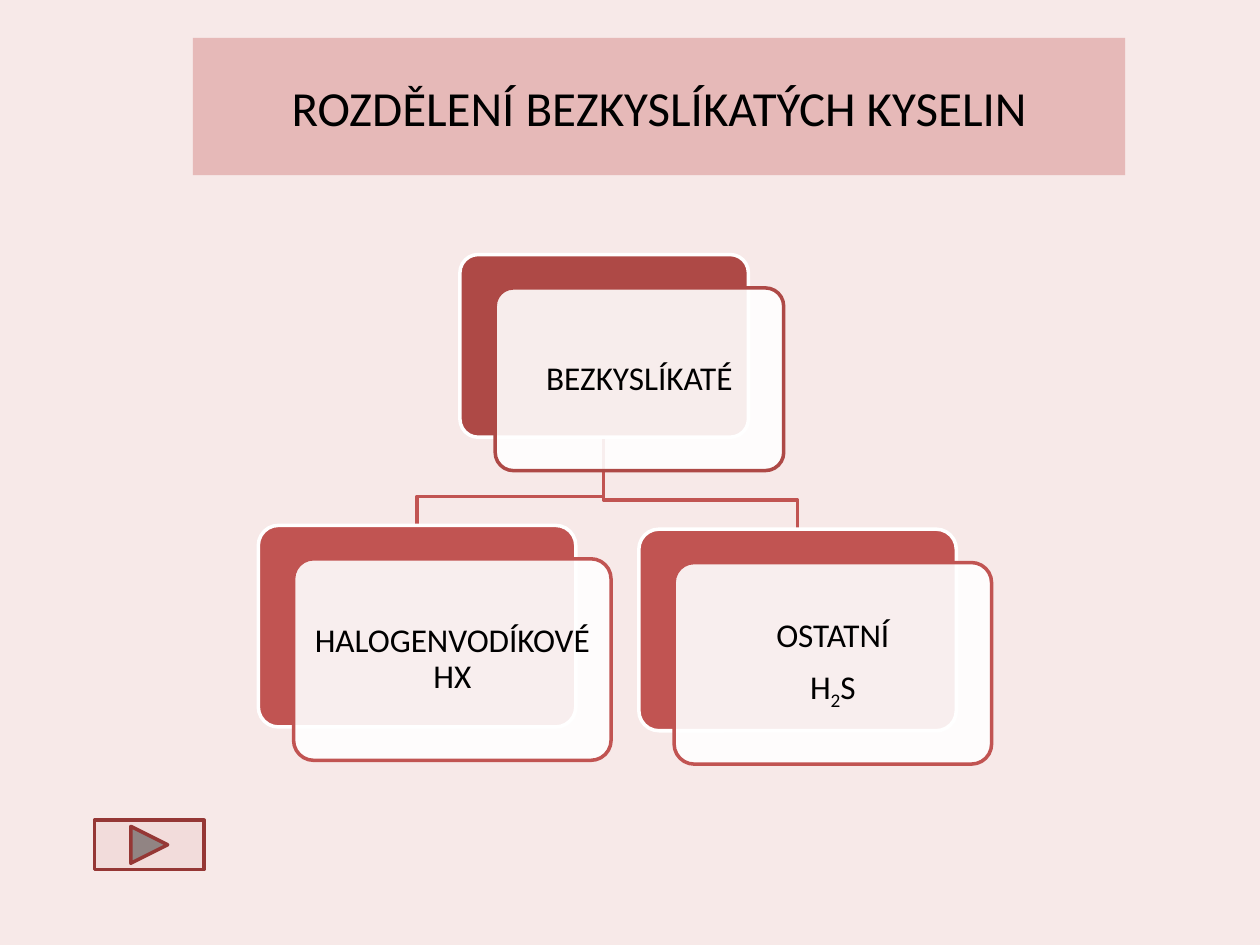
"""Build a slide with a tree that sorts the oxygen-free acids."""
from lxml import etree
from pptx import Presentation
from pptx.dml.color import RGBColor
from pptx.enum.shapes import MSO_SHAPE
from pptx.enum.text import MSO_ANCHOR, PP_ALIGN
from pptx.oxml.ns import qn
from pptx.util import Inches, Pt

CENTER = PP_ALIGN.CENTER
MIDDLE = MSO_ANCHOR.MIDDLE
ROUNDED = MSO_SHAPE.ROUNDED_RECTANGLE
FORWARD = MSO_SHAPE.ACTION_BUTTON_FORWARD_OR_NEXT
TITLE_ONLY = 5

COLORS = {
    "background": "F7E9E8",
    "title": "E6B9B8",
    "text": "000000",
    "white": "FFFFFF",
    "root": "AE4946",
    "child": "C15452",
    "button": "F2DCDB",
    "button_line": "953735",
}


class AcidSlide:
    """Hold the style and the slide, and draw each kind of element."""

    font = "Calibri"
    title_size = Pt(28)
    node_size = Pt(19)
    line_width = Pt(2)
    card_shift = (0.28, 0.265)
    inset = Inches(0.08)

    def __init__(self, presentation):
        """Add the slide and colour its background."""
        self.slide = presentation.slides.add_slide(
            presentation.slide_layouts[TITLE_ONLY])
        self.paint(self.slide.background.fill, "background")

    def paint(self, fill, color):
        """Give a fill one solid colour."""
        fill.solid()
        fill.fore_color.rgb = RGBColor.from_string(COLORS[color])

    def outline(self, shape, color):
        """Give a shape the common line in one colour."""
        self.paint(shape.line.fill, color)
        shape.line.width = self.line_width

    def style_text(self, paragraph, size):
        """Centre a paragraph and format its runs."""
        paragraph.alignment = CENTER
        for run in paragraph.runs:
            run.font.name = self.font
            run.font.size = size
            run.font.color.rgb = RGBColor.from_string(COLORS["text"])

    def title(self, text, left, top, width, height):
        """Fill and place the title placeholder."""
        heading = self.slide.shapes.title
        heading.left, heading.top = Inches(left), Inches(top)
        heading.width, heading.height = Inches(width), Inches(height)
        self.paint(heading.fill, "title")
        heading.text_frame.text = text
        heading.text_frame.vertical_anchor = MIDDLE
        self.style_text(heading.text_frame.paragraphs[0], self.title_size)

    def shape(self, kind, left, top, width, height, fill, line):
        """Add a filled and outlined preset shape."""
        shape = self.slide.shapes.add_shape(
            kind, Inches(left), Inches(top), Inches(width), Inches(height))
        shape.shadow.inherit = False
        self.paint(shape.fill, fill)
        self.outline(shape, line)
        return shape

    def branch(self, start, end, bend):
        """Draw an angled branch from a parent down to a child."""
        (start_x, start_y), (end_x, end_y) = start, end
        builder = self.slide.shapes.build_freeform(
            Inches(start_x), Inches(start_y))
        corners = [(start_x, bend), (end_x, bend), (end_x, end_y)]
        builder.add_line_segments(
            [(Inches(x), Inches(y)) for x, y in corners], close=False)
        branch = builder.convert_to_shape()
        branch.shadow.inherit = False
        branch.fill.background()
        self.outline(branch, "child")

    def node(self, lines, left, top, width, height, color):
        """Draw a node: a solid back card and a translucent labelled card."""
        back = self.shape(ROUNDED, left, top, width, height, color, "white")
        shift_x, shift_y = self.card_shift
        front = self.shape(ROUNDED, left + shift_x, top + shift_y,
                           width, height, "white", color)
        back.adjustments[0] = front.adjustments[0] = 0.1
        white = front.fill._xPr.find(qn("a:solidFill"))[0]
        etree.SubElement(white, qn("a:alpha"), val="90000")
        self.label(front.text_frame, lines)

    def label(self, frame, lines):
        """Write the lines; each is a list of (text, baseline) parts."""
        frame.word_wrap = True
        frame.vertical_anchor = MIDDLE
        frame.margin_left = frame.margin_right = self.inset
        frame.margin_top = frame.margin_bottom = self.inset
        for index, parts in enumerate(lines):
            paragraph = frame.add_paragraph() if index else frame.paragraphs[0]
            paragraph.line_spacing = 0.9
            paragraph.space_after = Pt(7)
            for text, baseline in parts:
                run = paragraph.add_run()
                run.text = text
                if baseline:
                    run.font._element.set("baseline", str(baseline * 1000))
            self.style_text(paragraph, self.node_size)


def main():
    """Build and save the slide."""
    presentation = Presentation()
    presentation.slide_width, presentation.slide_height = Inches(10), Inches(7.5)
    acids = AcidSlide(presentation)
    acids.title("ROZDĚLENÍ BEZKYSLÍKATÝCH KYSELIN", 1.53, 0.3, 7.4, 1.09)

    root_bottom = (4.79, 3.47)
    child_width, child_height = 2.52, 1.6
    children = [
        (5.07, 4.2, [[("OSTATNÍ", 0)], [("H", 0), ("2", -25), ("S", 0)]]),
        (2.05, 4.17, [[("HALOGENVODÍKOVÉ HX", 0)]]),
    ]
    for left, top, _ in children:
        acids.branch(root_bottom, (left + child_width / 2, top), top - 0.23)
    acids.node([[("BEZKYSLÍKATÉ", 0)]], 3.65, 2.02, 2.29, 1.45, "root")
    for left, top, lines in reversed(children):
        acids.node(lines, left, top, child_width, child_height, "child")

    acids.shape(FORWARD, 0.75, 6.51, 0.87, 0.39, "button", "button_line")
    presentation.save("out.pptx")


if __name__ == "__main__":
    main()
